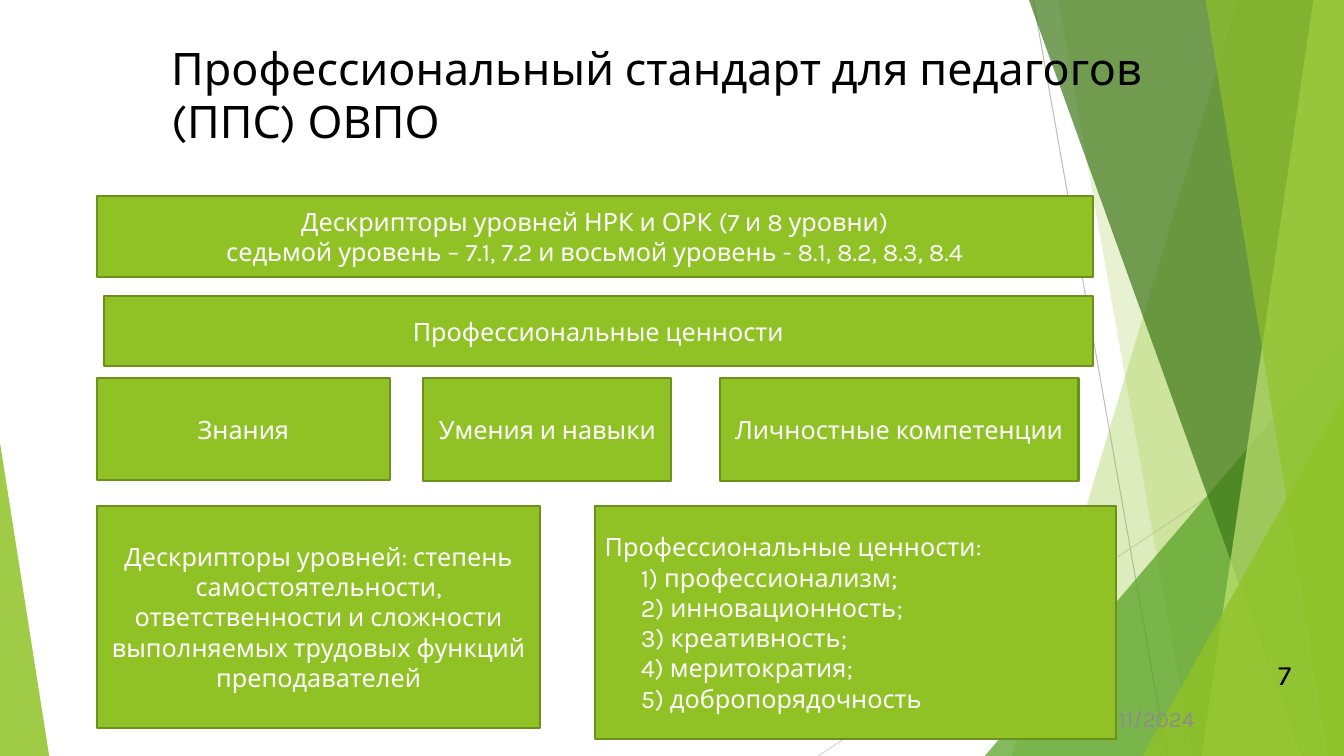
from lxml import etree
from pptx import Presentation
from pptx.dml.color import RGBColor
from pptx.enum import shapes, text
from pptx.oxml import ns
from pptx.util import Cm, Pt

COLORS = {
    "green": "90C226", "outline": "6B901C", "leaf": "54A021",
    "dark": "3F7819", "light": "C0E474", "white": "FFFFFF",
    "black": "000000", "grey": "8C8C8C", "line": "BFBFBF", "pale": "D9D9D9",
}
FONT = "Karla"
WIDTH, HEIGHT = 33.87, 19.05
LEFT, CENTER, RIGHT = text.PP_ALIGN.LEFT, text.PP_ALIGN.CENTER, text.PP_ALIGN.RIGHT


def rgb(name):
    return RGBColor.from_string(COLORS[name])


def add_ray(s, x1, y1, x2, y2, color):
    line = s.shapes.add_connector(
        shapes.MSO_CONNECTOR.STRAIGHT, Cm(x1), Cm(y1), Cm(x2), Cm(y2))
    line.line.color.rgb = rgb(color)
    line.line.width = Pt(0.75)
    etree.SubElement(line._element.spPr, ns.qn("a:effectLst"))


def paint_facet(sp, color, opacity):
    sp.shadow.inherit = False
    sp.line.fill.background()
    sp.fill.solid()
    sp.fill.fore_color.rgb = rgb(color)
    clr = sp._element.spPr.find(ns.qn("a:solidFill"))[0]
    etree.SubElement(clr, ns.qn("a:alpha"), val=str(opacity * 1000))


def add_band(s, top_x, bottom_x, color, opacity):
    builder = s.shapes.build_freeform(Cm(top_x), 0)
    builder.add_line_segments(
        [(Cm(WIDTH), 0), (Cm(WIDTH), Cm(HEIGHT)), (Cm(bottom_x), Cm(HEIGHT))])
    paint_facet(builder.convert_to_shape(), color, opacity)


def add_corner(s, x, y, w, apex, color, opacity):
    sp = s.shapes.add_shape(shapes.MSO_SHAPE.ISOSCELES_TRIANGLE,
                            Cm(x), Cm(y), Cm(w), Cm(HEIGHT - y))
    sp.adjustments[0] = apex
    paint_facet(sp, color, opacity)


def write(tf, lines, size, color, align, anchor=text.MSO_ANCHOR.MIDDLE):
    tf.word_wrap = True
    tf.vertical_anchor = anchor
    for i, line in enumerate(lines):
        p = tf.paragraphs[0] if i == 0 else tf.add_paragraph()
        p.text = line
        p.alignment = align
        p.font.name = FONT
        p.font.size = Pt(size)
        p.font.color.rgb = rgb(color)


def add_label(s, x, y, w, h, line, size, color):
    sp = s.shapes.add_textbox(Cm(x), Cm(y), Cm(w), Cm(h))
    write(sp.text_frame, [line], size, color, RIGHT)


def add_box(s, x, y, w, h, lines, align=CENTER):
    sp = s.shapes.add_shape(shapes.MSO_SHAPE.RECTANGLE, Cm(x), Cm(y), Cm(w), Cm(h))
    sp.shadow.inherit = False
    sp.fill.solid()
    sp.fill.fore_color.rgb = rgb("green")
    sp.line.color.rgb = rgb("outline")
    sp.line.width = Pt(1.5)
    write(sp.text_frame, lines, 18, "white", align)
    return sp


def add_backdrop(s):
    add_ray(s, 26.04, 0, 29.41, HEIGHT, "line")
    add_ray(s, WIDTH, 10.24, 20.62, HEIGHT, "pale")
    add_band(s, 31.19, 25.5, "green", 30)
    add_band(s, 26.67, 30.05, "green", 20)
    add_corner(s, 24.82, 8.46, 9.05, 1, "leaf", 72)
    add_band(s, 25.93, 32.79, "dark", 70)
    add_band(s, 33.1, 30.28, "light", 70)
    add_band(s, 30.38, 33.48, "green", 65)
    add_corner(s, 28.8, 9.98, 5.07, 1, "green", 80)
    add_corner(s, 0, 11.15, 1.24, 0, "green", 85)


def set_title(s, line):
    sp = s.shapes.title
    sp.left, sp.top, sp.width, sp.height = Cm(4.06), Cm(0.89), Cm(25.73), Cm(3.07)
    write(sp.text_frame, [line], 32, "black", LEFT, text.MSO_ANCHOR.TOP)
    sp.text_frame.auto_size = text.MSO_AUTO_SIZE.NONE


def add_values(s):
    values = ["профессионализм;", "инновационность;", "креативность;",
              "меритократия;", "добропорядочность"]
    lines = [f"{n}) {value}" for n, value in enumerate(values, 1)]
    sp = add_box(s, 14.99, 12.75, 13.13, 5.87,
                 ["Профессиональные ценности:"] + lines, LEFT)
    for p in sp.text_frame.paragraphs[1:]:
        p._p.get_or_add_pPr().set("marL", str(Cm(0.91)))


def main():
    prs = Presentation()
    prs.slide_width, prs.slide_height = Cm(WIDTH), Cm(HEIGHT)
    s = prs.slides.add_slide(prs.slide_layouts.get_by_name("Title Only"))
    add_backdrop(s)
    title = s.shapes.title._element
    title.getparent().append(title)
    set_title(s, "Профессиональный стандарт для педагогов (ППС) ОВПО")
    add_label(s, 26.31, 17.6, 4.04, 1.02, "1/11/2024", 16, "grey")
    add_label(s, 30.43, 16.03, 2.36, 1.93, "7", 20, "black")
    for x, w, h, line in [(2.44, 7.39, 2.57, "Знания"),
                          (10.67, 6.25, 2.59, "Умения и навыки"),
                          (18.14, 9.04, 2.59, "Личностные компетенции")]:
        add_box(s, x, 9.53, w, h, [line])
    add_box(s, 2.44, 4.95, 25.1, 2.03, [
        "Дескрипторы уровней НРК и ОРК (7 и 8 уровни)",
        "седьмой уровень – 7.1, 7.2 и восьмой уровень - 8.1, 8.2, 8.3, 8.4"])
    add_box(s, 2.62, 7.47, 24.92, 1.75, ["Профессиональные ценности"])
    add_box(s, 2.44, 12.75, 11.18, 5.59, [
        "Дескрипторы уровней: степень самостоятельности, ответственности "
        "и сложности выполняемых трудовых функций преподавателей"])
    add_values(s)
    prs.save("out.pptx")


if __name__ == "__main__":
    main()
